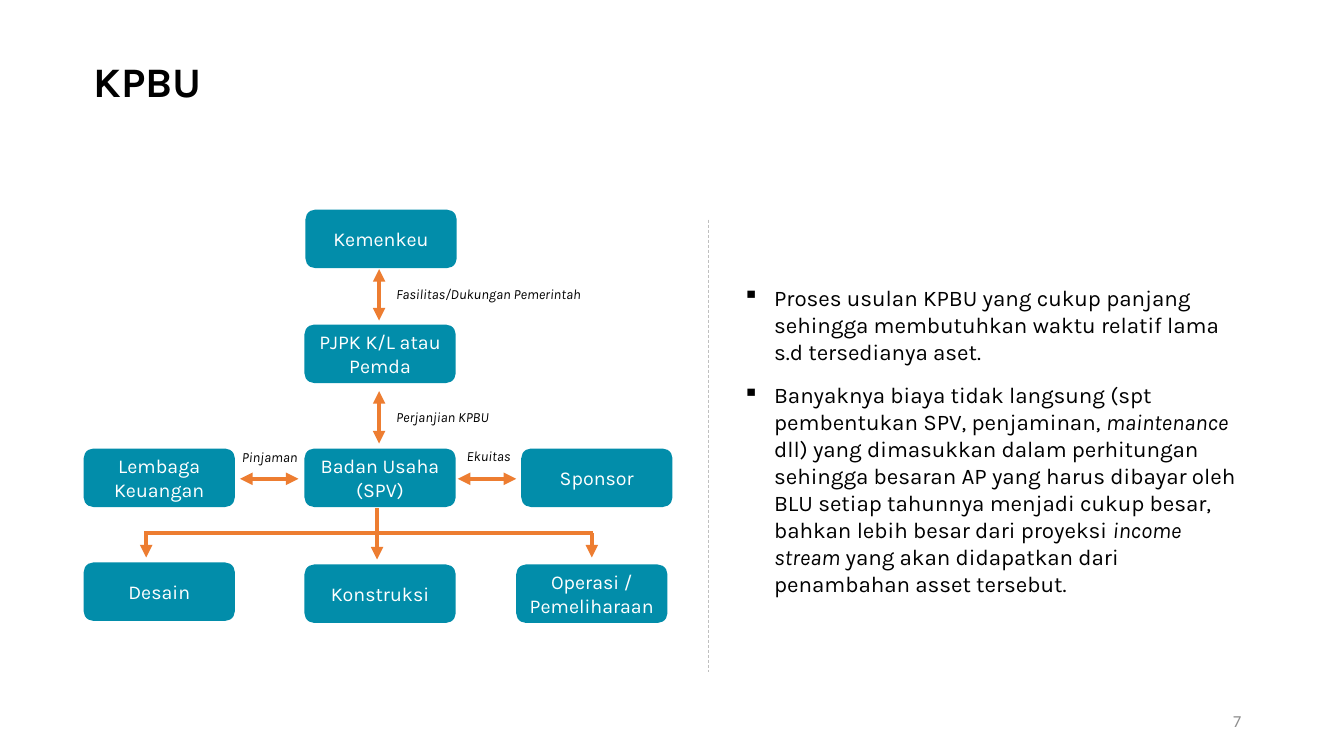
from lxml import etree
from pptx import Presentation
from pptx.dml.color import RGBColor
from pptx.enum import dml, shapes, text
from pptx.oxml import ns
from pptx.util import Inches, Pt


def style(frame, size, color="000000", align=text.PP_ALIGN.LEFT, font="Karla"):
    for paragraph in frame.paragraphs:
        paragraph.alignment = align
        for run in paragraph.runs:
            run.font.size = Pt(size)
            run.font.name = font
            run.font.color.rgb = RGBColor.from_string(color)


def connect(x1, y1, x2, y2, color="ED7D31", width=3, ends=()):
    line = slide.shapes.add_connector(
        shapes.MSO_CONNECTOR.STRAIGHT, Inches(x1), Inches(y1), Inches(x2), Inches(y2))
    line.line.color.rgb = RGBColor.from_string(color)
    line.line.width = Pt(width)
    for end in ends:
        etree.SubElement(line.line._get_or_add_ln(), ns.qn(f"a:{end}"), type="triangle")
    etree.SubElement(line._element.spPr, ns.qn("a:effectLst"))
    return line


prs = Presentation()
prs.slide_width, prs.slide_height = Inches(13.33), Inches(7.5)
slide = prs.slides.add_slide(prs.slide_layouts[5])

heading = slide.shapes.title
heading.left, heading.top = Inches(0.83), Inches(0.5)
heading.width, heading.height = Inches(4.51), Inches(0.61)
heading.text_frame.text = "KPBU"
heading.text_frame.auto_size = text.MSO_AUTO_SIZE.NONE
heading.text_frame.vertical_anchor = text.MSO_ANCHOR.TOP
style(heading.text_frame, 30)
heading.text_frame.paragraphs[0].runs[0].font.bold = True

page = slide.shapes.add_textbox(Inches(9.41), Inches(6.95), Inches(3), Inches(0.4)).text_frame
page.text = "7"
page.word_wrap = True
page.vertical_anchor = text.MSO_ANCHOR.MIDDLE
style(page, 12, "8C8C8C", text.PP_ALIGN.RIGHT, "Calibri")

issues = [
    [("Proses usulan KPBU yang cukup panjang sehingga membutuhkan waktu relatif lama "
      "s.d tersedianya aset.", False)],
    [("Banyaknya biaya tidak langsung (spt pembentukan SPV, penjaminan, ", False),
     ("maintenance ", True),
     ("dll) yang dimasukkan dalam perhitungan sehingga besaran AP yang harus dibayar oleh "
      "BLU setiap tahunnya menjadi cukup besar, bahkan lebih besar dari proyeksi ", False),
     ("income stream", True),
     (" yang akan didapatkan dari penambahan asset tersebut.", False)],
]
notes = slide.shapes.add_textbox(
    Inches(7.27), Inches(2.77), Inches(5.17), Inches(3.23)).text_frame
notes.word_wrap = True
for index, issue in enumerate(issues):
    paragraph = notes.add_paragraph() if index else notes.paragraphs[0]
    paragraph.space_before = paragraph.space_after = Pt(6)
    for words, italic in issue:
        run = paragraph.add_run()
        run.text = words
        run.font.italic = italic
    props = paragraph._p.get_or_add_pPr()
    props.set("marL", str(Inches(0.31)))
    props.set("indent", str(-Inches(0.31)))
    etree.SubElement(props, ns.qn("a:buChar"), char="▪")
style(notes, 16)

divider = connect(7.03, 2.18, 7.03, 6.67, "BFBFBF", 0.5)
divider.line.dash_style = dml.MSO_LINE.DASH

parties = [
    ("Kemenkeu", 3.03, 2.08),
    ("PJPK K/L atau Pemda", 3.02, 3.22),
    ("Badan Usaha (SPV)", 3.02, 4.45),
    ("Sponsor", 5.17, 4.45),
    ("Lembaga Keuangan", 0.83, 4.45),
    ("Konstruksi", 3.02, 5.6),
    ("Operasi / Pemeliharaan", 5.12, 5.6),
    ("Desain", 0.83, 5.58),
]
for name, left, top in parties:
    party = slide.shapes.add_shape(
        shapes.MSO_SHAPE.ROUNDED_RECTANGLE, Inches(left), Inches(top), Inches(1.5), Inches(0.58))
    party.shadow.inherit = False
    party.fill.solid()
    party.fill.fore_color.rgb = RGBColor.from_string("028DAA")
    party.line.fill.background()
    party.text_frame.text = name
    party.text_frame.word_wrap = True
    party.text_frame.vertical_anchor = text.MSO_ANCHOR.MIDDLE
    style(party.text_frame, 14, "FFFFFF", text.PP_ALIGN.CENTER)

relations = [
    ("Fasilitas/Dukungan Pemerintah", (3.83, 2.78, 2.2), (3.76, 2.67, 3.76, 3.18)),
    ("Perjanjian KPBU", (3.83, 4, 1.25), (3.76, 3.88, 3.76, 4.4)),
    ("Ekuitas", (4.53, 4.39, 0.75), (5.12, 4.75, 4.54, 4.75)),
    ("Pinjaman", (2.3, 4.4, 0.85), (2.96, 4.75, 2.38, 4.75)),
]
for name, (left, top, width), ends in relations:
    connect(*ends, ends=("headEnd", "tailEnd"))
    relation = slide.shapes.add_textbox(
        Inches(left), Inches(top), Inches(width), Inches(0.27)).text_frame
    relation.text = name
    relation.word_wrap = True
    style(relation, 10)
    relation.paragraphs[0].runs[0].font.italic = True

for x, top, bottom in [(3.74, 5.04, 5.55), (5.87, 5.29, 5.53), (1.45, 5.29, 5.53)]:
    connect(x, top, x, bottom, ends=("tailEnd",))
connect(5.88, 5.29, 1.43, 5.29)

prs.save("out.pptx")
